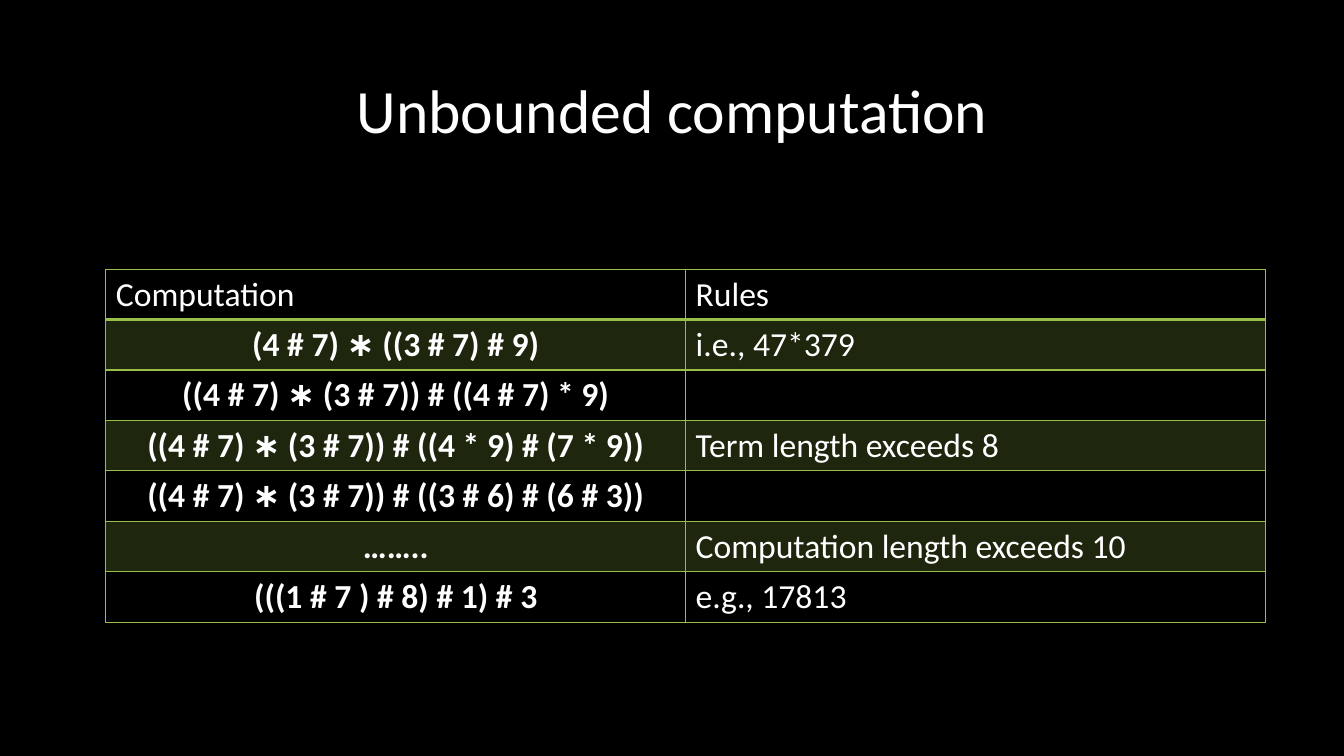
from lxml.etree import SubElement
from pptx import Presentation
from pptx.dml.color import RGBColor
from pptx.enum.text import MSO_ANCHOR, PP_ALIGN
from pptx.oxml.ns import qn
from pptx.util import Inches, Pt

BLACK = RGBColor(0x00, 0x00, 0x00)
WHITE = RGBColor(0xFF, 0xFF, 0xFF)
GREEN = RGBColor(0x97, 0xBE, 0x49)
FONT = "Calibri"
BAND_OPACITY = 20

HEADINGS = ("Computation", "Rules")
STEPS = [
    ("(4 # 7) ∗ ((3 # 7) # 9)", "i.e., 47*379"),
    ("((4 # 7) ∗ (3 # 7)) # ((4 # 7) * 9)", ""),
    ("((4 # 7) ∗ (3 # 7)) # ((4 * 9) # (7 * 9))", "Term length exceeds 8"),
    ("((4 # 7) ∗ (3 # 7)) # ((3 # 6) # (6 # 3))", ""),
    ("……..", "Computation length exceeds 10"),
    ("(((1 # 7 ) # 8) # 1) # 3", "e.g., 17813"),
]


def write(paragraph, text, size, bold=False, align=PP_ALIGN.LEFT):
    paragraph.alignment = align
    paragraph.font.size = Pt(size)
    if not text:
        return
    run = paragraph.add_run()
    run.text = text
    run.font.name = FONT
    run.font.size = Pt(size)
    run.font.bold = bold
    run.font.color.rgb = WHITE


def add_title(slide, left, top, width, height):
    title = slide.shapes.add_textbox(left, top, width, height)
    frame = title.text_frame
    frame.word_wrap = True
    frame.vertical_anchor = MSO_ANCHOR.MIDDLE
    frame.paragraphs[0].line_spacing = 0.9
    write(frame.paragraphs[0], "Unbounded computation", 44, align=PP_ALIGN.CENTER)


def add_borders(cell, widths):
    """Draw green borders; widths maps each side (L, R, T, B) to points."""
    properties = cell._tc.get_or_add_tcPr()
    for side, width in widths.items():
        line = SubElement(properties, qn(f"a:ln{side}"), w=str(Pt(width)))
        solid = SubElement(line, qn("a:solidFill"))
        SubElement(solid, qn("a:srgbClr"), val=str(GREEN))


def fill_band(cell):
    cell.fill.solid()
    cell.fill.fore_color.rgb = GREEN
    color = cell._tc.tcPr.find(f"{qn('a:solidFill')}/{qn('a:srgbClr')}")
    SubElement(color, qn("a:alpha"), val=str(BAND_OPACITY * 1000))


def add_steps_table(slide, left, top, width, height):
    rows = [HEADINGS, *STEPS]
    table = slide.shapes.add_table(
        len(rows), len(HEADINGS), left, top, width, height).table
    table.first_row = False
    table.horz_banding = False
    for row_index, texts in enumerate(rows):
        for column_index, text in enumerate(texts):
            cell = table.cell(row_index, column_index)
            is_formula = row_index > 0 and column_index == 0
            write(cell.text_frame.paragraphs[0], text, 24, bold=is_formula,
                  align=PP_ALIGN.CENTER if is_formula else PP_ALIGN.LEFT)
            add_borders(cell, {"L": 1, "R": 1,
                               "T": 2 if row_index == 1 else 1,
                               "B": 2 if row_index == 0 else 1})
            if row_index % 2:
                fill_band(cell)
            else:
                cell.fill.background()


def main():
    presentation = Presentation()
    presentation.slide_width = Inches(13.33)
    presentation.slide_height = Inches(7.5)
    slide = presentation.slides.add_slide(presentation.slide_layouts[6])
    slide.background.fill.solid()
    slide.background.fill.fore_color.rgb = BLACK
    add_title(slide, Inches(0.92), Inches(0.4), Inches(11.5), Inches(1.45))
    add_steps_table(slide, Inches(1.05), Inches(2.67), Inches(11.5), Inches(3.5))
    presentation.save("out.pptx")


if __name__ == "__main__":
    main()
